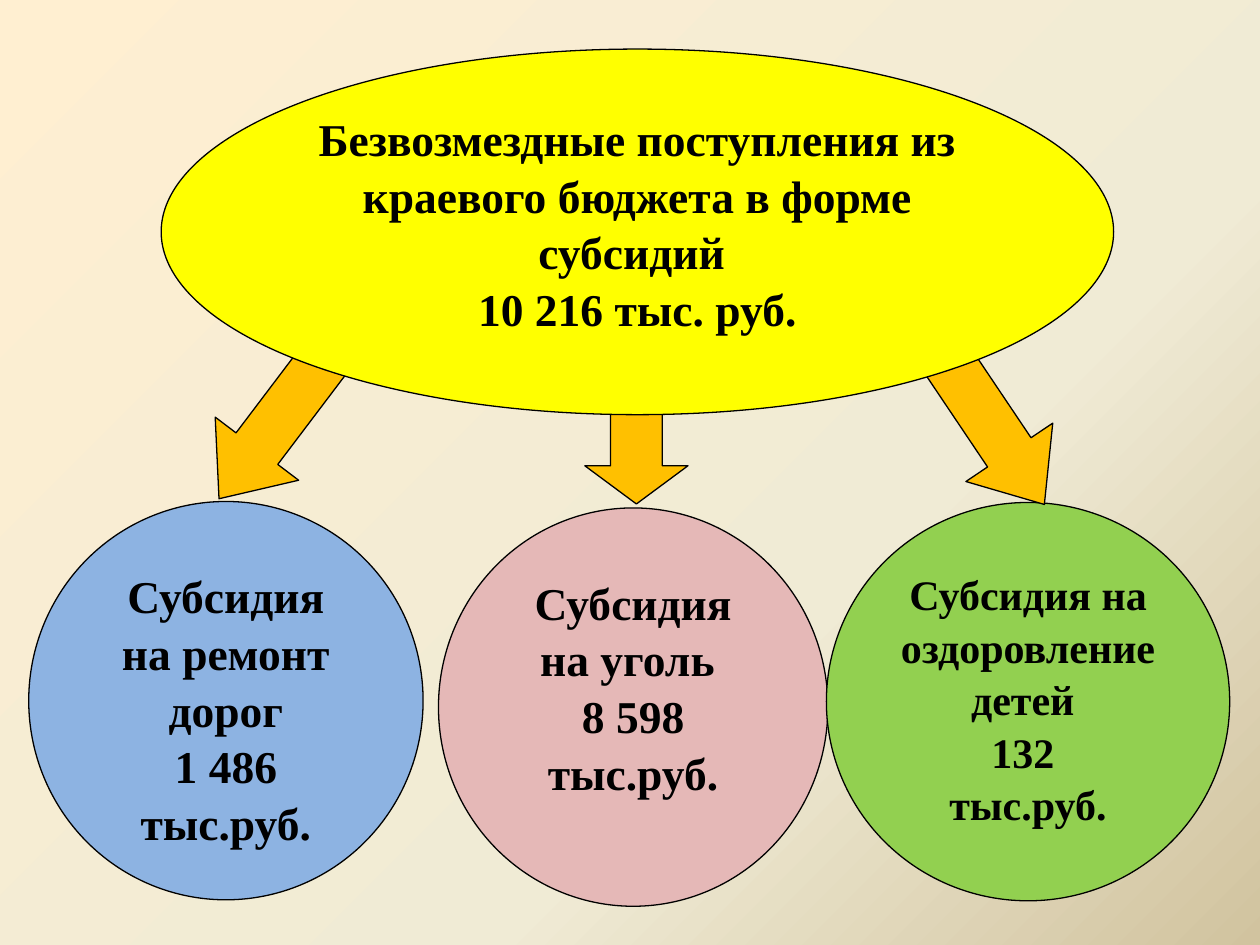
from copy import deepcopy

from pptx import Presentation
from pptx.dml.color import RGBColor
from pptx.enum.shapes import MSO_SHAPE
from pptx.enum.text import MSO_ANCHOR, PP_ALIGN
from pptx.oxml.ns import qn
from pptx.util import Cm, Pt

OVAL = MSO_SHAPE.OVAL
DOWN_ARROW = MSO_SHAPE.DOWN_ARROW
TOP = MSO_ANCHOR.TOP
CENTER = PP_ALIGN.CENTER

BLACK = RGBColor(0x00, 0x00, 0x00)
YELLOW = RGBColor(0xFF, 0xFF, 0x00)
ORANGE = RGBColor(0xFF, 0xC0, 0x00)
BLUE = RGBColor(0x8D, 0xB3, 0xE2)
PINK = RGBColor(0xE5, 0xB8, 0xB7)
GREEN = RGBColor(0x92, 0xD0, 0x50)
BACKGROUND_STOPS = [
    (0, RGBColor(0xFF, 0xEF, 0xD1)),
    (0.65, RGBColor(0xF0, 0xEB, 0xD5)),
    (1, RGBColor(0xD1, 0xC3, 0x9F)),
]

FONT = "Times New Roman"

TOTAL = (
    (3.25, 0.99, 19.2, 7.37), YELLOW, 26,
    ["Безвозмездные поступления из краевого бюджета в форме субсидий ",
     "10 216 тыс. руб."],
)
SUBSIDIES = [
    ((0.58, 10.11, 7.95, 8.03), BLUE, 26,
     ["Субсидия на ремонт дорог", "1 486 тыс.руб."]),
    ((8.84, 10.24, 7.85, 8.03), PINK, 26,
     ["Субсидия на уголь ", "8\u00a0598 тыс.руб."]),
    ((16.66, 10.13, 8.13, 8.03), GREEN, 24,
     ["Субсидия на оздоровление детей ", "132 ", "тыс.руб."]),
]
ARROWS = [
    ((5.49, 3.71, 2.11, 7.06), 37.1, 0.6),
    ((11.79, 5.79, 2.08, 4.37), 0, 0.37),
    ((18.03, 3.71, 2.11, 7.06), 326.1, 0.6),
]


def paint_background(slide):
    fill = slide.background.fill
    fill.gradient()
    fill.gradient_angle = 315
    stop_list = next(slide.element.iter(qn("a:gsLst")))
    stop_list.append(deepcopy(stop_list[-1]))
    for stop, (position, color) in zip(fill.gradient_stops, BACKGROUND_STOPS):
        stop.position = position
        stop.color.rgb = color


def add_outlined_shape(slide, kind, box, color):
    shape = slide.shapes.add_shape(kind, *map(Cm, box))
    shape.shadow.inherit = False
    shape.fill.solid()
    shape.fill.fore_color.rgb = color
    shape.line.color.rgb = BLACK
    shape.line.width = Pt(0.75)
    return shape


def add_oval(slide, box, color, size, lines):
    text_frame = add_outlined_shape(slide, OVAL, box, color).text_frame
    text_frame.word_wrap = True
    text_frame.vertical_anchor = TOP
    text_frame.text = "\n".join(lines)
    for paragraph in text_frame.paragraphs:
        paragraph.alignment = CENTER
        paragraph.line_spacing = 1.04
        paragraph.font.name = FONT
        paragraph.font.size = Pt(size)
        paragraph.font.bold = True
        paragraph.font.color.rgb = BLACK


def add_arrow(slide, box, rotation, head_ratio):
    shape = add_outlined_shape(slide, DOWN_ARROW, box, ORANGE)
    shape.rotation = rotation
    shape.adjustments[1] = head_ratio


def main():
    presentation = Presentation()
    presentation.slide_width = Cm(25.4)
    presentation.slide_height = Cm(19.05)
    slide = presentation.slides.add_slide(presentation.slide_layouts[6])
    paint_background(slide)
    for subsidy in SUBSIDIES:
        add_oval(slide, *subsidy)
    for arrow in ARROWS:
        add_arrow(slide, *arrow)
    add_oval(slide, *TOTAL)
    presentation.save("out.pptx")


if __name__ == "__main__":
    main()
